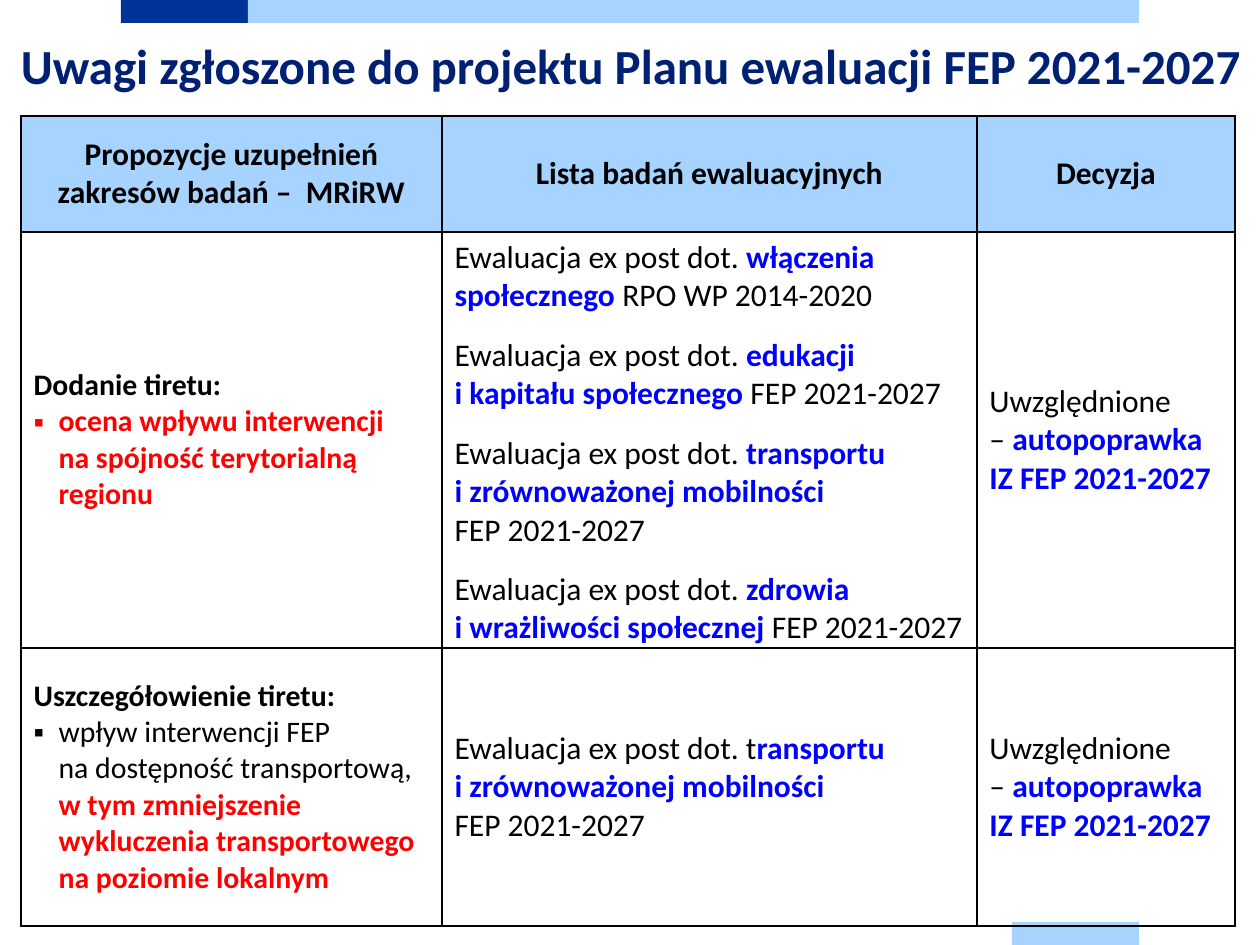
"""Builds the slide with remarks on the FEP 2021-2027 evaluation plan."""
from copy import deepcopy

from lxml.etree import SubElement
from pptx import Presentation
from pptx.dml.color import RGBColor as Rgb
from pptx.enum.shapes import MSO_SHAPE as Shape
from pptx.enum.text import MSO_ANCHOR as Anchor, PP_ALIGN as Align
from pptx.oxml import parse_xml
from pptx.oxml.ns import nsdecls, qn
from pptx.util import Pt

EMU_PER_PX = 914400 / 126
COLORS = {"navy": "003399", "sky": "A6D3FF", "title": "002073",
          "black": "000000", "blue": "0000FF", "red": "FF0000"}
PLAIN = ("black", False)
STRONG = ("black", True)
TOPIC = ("blue", True)
CHANGE = ("red", True)


def px(length):
    return round(length * EMU_PER_PX)


def color(name):
    return Rgb.from_string(COLORS[name])


def write(paragraph, runs, size=18, align=Align.LEFT, before=0, after=0,
          spacing=None, bullet=None, font="Calibri"):
    if bullet:
        properties = paragraph._p.get_or_add_pPr()
        properties.set("marL", str(px(25)))
        properties.set("indent", str(-px(25)))
        SubElement(properties, qn("a:buFont"), typeface="Arial")
        SubElement(properties, qn("a:buChar"), char=bullet)
    paragraph.alignment = align
    paragraph.space_before, paragraph.space_after = Pt(before), Pt(after)
    if spacing:
        paragraph.line_spacing = Pt(spacing)
    for text, (color_name, bold) in runs:
        for index, line in enumerate(text.split("\n")):
            if index:
                paragraph.add_line_break()
                paragraph._p[-1].append(deepcopy(run._r.rPr))
            if line:
                run = paragraph.add_run()
                run.text = line
                run.font.name, run.font.size, run.font.bold = font, Pt(size), bold
                run.font.color.rgb = color(color_name)


def write_all(frame, paragraphs):
    for index, (runs, options) in enumerate(paragraphs):
        paragraph = frame.add_paragraph() if index else frame.paragraphs[0]
        before = options.get("before", 0) if index else 0
        write(paragraph, runs, **{**options, "before": before})


class SlideBuilder:
    """Holds the border style and the current slide."""

    def __init__(self, slide, border_color="black", border_width=1):
        self.slide = slide
        self.border_color = COLORS[border_color]
        self.border_width = Pt(border_width)

    def bar(self, left, top, width, height, fill):
        shape = self.slide.shapes.add_shape(
            Shape.RECTANGLE, px(left), px(top), px(width), px(height))
        shape.shadow.inherit = False
        shape.fill.solid()
        shape.fill.fore_color.rgb = color(fill)
        shape.line.fill.background()

    def title(self, left, top, width, height, text):
        frame = self.slide.shapes.add_textbox(
            px(left), px(top), px(width), px(height)).text_frame
        frame.word_wrap = True
        frame.vertical_anchor = Anchor.MIDDLE
        frame.margin_left = frame.margin_right = 0
        frame.margin_top = frame.margin_bottom = 0
        write(frame.paragraphs[0], [(text, ("title", True))], size=28, spacing=30.8)

    def border(self, cell):
        properties = cell._tc.get_or_add_tcPr()
        for index, edge in enumerate(("lnL", "lnR", "lnT", "lnB")):
            properties.insert(index, parse_xml(
                f'<a:{edge} {nsdecls("a")} w="{self.border_width}"><a:solidFill>'
                f'<a:srgbClr val="{self.border_color}"/></a:solidFill></a:{edge}>'))

    def table(self, left, top, widths, heights, content):
        table = self.slide.shapes.add_table(
            len(heights), len(widths), px(left), px(top),
            px(sum(widths)), px(sum(heights))).table
        table.first_row = table.horz_banding = False
        for column, width in zip(table.columns, widths):
            column.width = px(width)
        for row, height in zip(table.rows, heights):
            row.height = px(height)
        for row_index, row_content in enumerate(content):
            for column_index, paragraphs in enumerate(row_content):
                cell = table.cell(row_index, column_index)
                cell.vertical_anchor = Anchor.MIDDLE
                if row_index == 0:
                    cell.fill.solid()
                    cell.fill.fore_color.rgb = color("sky")
                else:
                    cell.fill.background()
                self.border(cell)
                write_all(cell.text_frame, paragraphs)


def header(text):
    return [([(text, STRONG)], {"align": Align.CENTER})]


def proposal(heading, *runs):
    return [([(heading, STRONG)], {"size": 17}), (runs, {"size": 17, "bullet": "▪"})]


def study(topic, ending, opening="Ewaluacja ex post dot. "):
    return ([(opening, PLAIN), (topic, TOPIC), (ending, PLAIN)],
            {"before": 6, "after": 6})


def main():
    presentation = Presentation()
    presentation.slide_width, presentation.slide_height = px(1260), px(945)
    builder = SlideBuilder(presentation.slides.add_slide(presentation.slide_layouts[6]))
    builder.bar(121, 0, 127, 23, "navy")
    builder.bar(248, 0, 891, 23, "sky")
    builder.bar(1012, 922, 127, 23, "sky")
    builder.title(21, 34, 1239, 67,
                  "Uwagi zgłoszone do projektu Planu ewaluacji FEP 2021-2027")
    decision = [([("Uwzględnione \n– ", PLAIN),
                  ("autopoprawka \nIZ FEP 2021-2027", TOPIC)], {})]
    builder.table(21, 116, (421, 535, 258), (116, 386, 278), [
        [header("Propozycje uzupełnień zakresów badań –  MRiRW"),
         header("Lista badań ewaluacyjnych"),
         header("Decyzja")],
        [proposal("Dodanie tiretu:",
                  ("ocena wpływu interwencji \nna spójność terytorialną regionu", CHANGE)),
         [study("włączenia społecznego ", "RPO WP 2014-2020"),
          study("edukacji \ni kapitału społecznego", " FEP 2021-2027"),
          study("transportu \ni zrównoważonej mobilności \n", "FEP 2021-2027"),
          study("zdrowia \ni wrażliwości społecznej", " FEP 2021-2027")],
         decision],
        [proposal("Uszczegółowienie tiretu:",
                  ("wpływ interwencji FEP \nna dostępność transportową, \n", PLAIN),
                  ("w tym zmniejszenie wykluczenia transportowego "
                   "na poziomie lokalnym", CHANGE)),
         [study("ransportu \ni zrównoważonej mobilności \n", "FEP 2021-2027",
                opening="Ewaluacja ex post dot. t")],
         decision],
    ])
    presentation.save("out.pptx")


if __name__ == "__main__":
    main()
